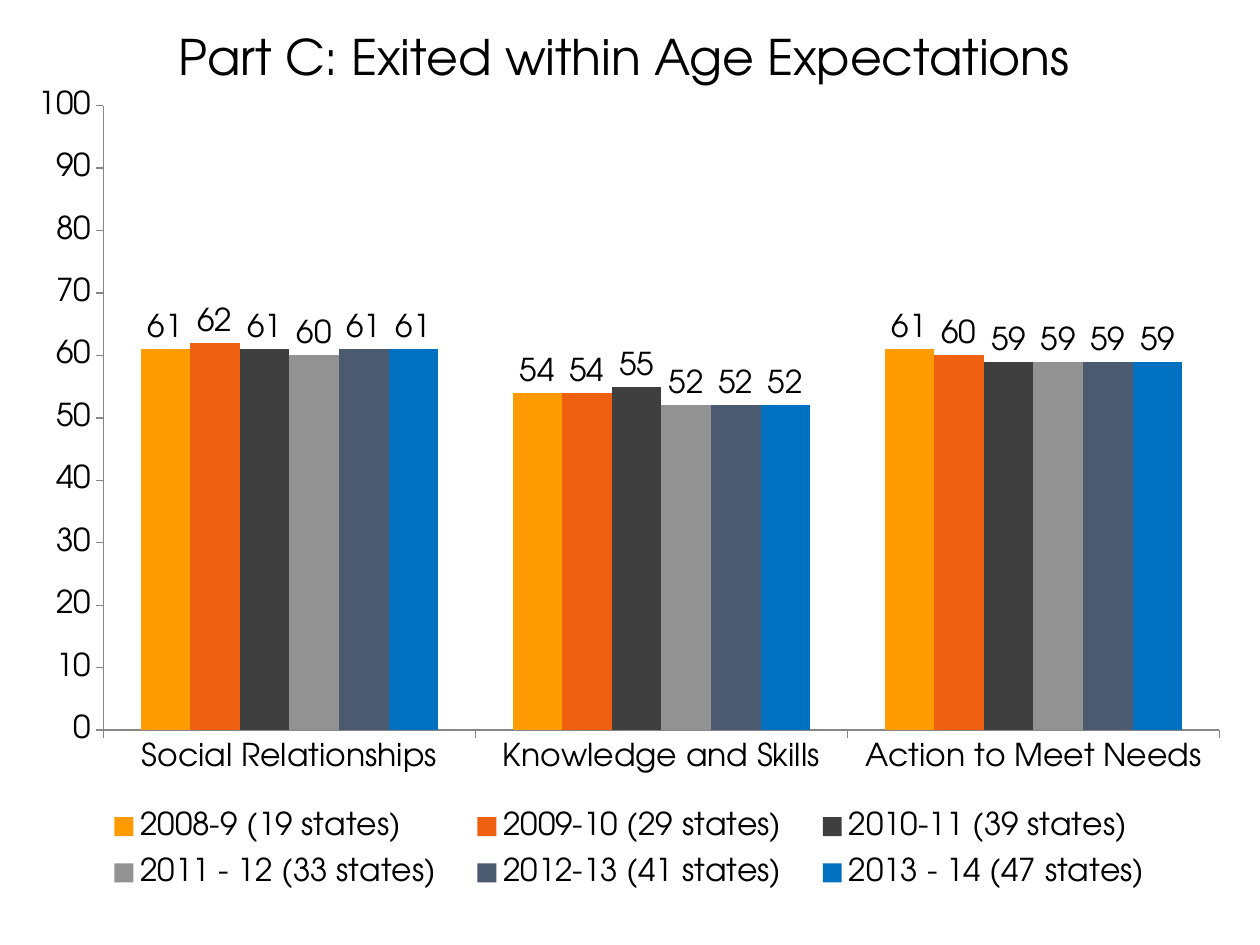
from lxml import etree
from pptx import Presentation
from pptx import util as u
from pptx.chart.data import CategoryChartData
from pptx.dml.color import RGBColor
from pptx.enum import chart as c
from pptx.oxml.ns import qn

TITLE = "Part C: Exited within Age Expectations"
CATEGORIES = ["Social Relationships", "Knowledge and Skills", "Action to Meet Needs"]
SERIES = [
    ("2008-9 (19 states)", (61, 54, 61), "FE9B00"),
    ("2009-10 (29 states)", (62, 54, 60), "EF6011"),
    ("2010-11 (39 states)", (61, 55, 59), "3F3F3F"),
    ("2011 - 12 (33 states)", (60, 52, 59), "929292"),
    ("2012-13 (41 states)", (61, 52, 59), "4B5A6F"),
    ("2013 - 14 (47 states)", (61, 52, 59), "0070C0"),
]
FONT = "TeX Gyre Adventor"
PX = u.Inches(1) / 126
CHART = (10, 0, 1228, 935)
PLOT = (103, 106, 1116, 625)
LEGEND = (84, 796, 1092, 108)


def px(value):
    return u.Emu(round(value * PX))


def color(value):
    return RGBColor.from_string(value)


def style_font(font, size=18, fill="000000"):
    font.name, font.size, font.bold = FONT, u.Pt(size), False
    font.color.rgb = color(fill)


def write(frame, content, **style):
    frame.text = content
    style_font(frame.paragraphs[0].runs[0].font, **style)


def place(layout, box, inner=False):
    """Position a chart part as fractions of the chart area."""
    for child in list(layout):
        layout.remove(child)
    manual = etree.SubElement(layout, qn("c:manualLayout"))
    left, top, width, height = box
    fractions = ((left - CHART[0]) / CHART[2], (top - CHART[1]) / CHART[3],
                 width / CHART[2], height / CHART[3])
    settings = [("layoutTarget", "inner")] if inner else []
    settings += [("xMode", "edge"), ("yMode", "edge")]
    settings += [(name, f"{part:.3f}") for name, part in zip("xywh", fractions)]
    for name, value in settings:
        etree.SubElement(manual, qn("c:" + name)).set("val", value)


presentation = Presentation()
presentation.slide_width, presentation.slide_height = px(1260), px(945)
slide = presentation.slides.add_slide(presentation.slide_layouts[6])

# Chart and its data
data = CategoryChartData(number_format="General")
data.categories = CATEGORIES
for name, values, _ in SERIES:
    data.add_series(name, values)
chart = slide.shapes.add_chart(
    c.XL_CHART_TYPE.COLUMN_CLUSTERED, *map(px, CHART), data).chart
style_font(chart.font)
chart.has_title = True
write(chart.chart_title.text_frame, TITLE, size=28)
chart.chart_title.include_in_layout = False

# Columns and value labels
plot = chart.plots[0]
plot.gap_width, plot.overlap = 150, 0
plot.vary_by_categories = False
for series, (_, _, fill) in zip(plot.series, SERIES):
    series.format.fill.solid()
    series.format.fill.fore_color.rgb = color(fill)
    labels = series.data_labels
    labels.show_value = True
    labels.position = c.XL_LABEL_POSITION.OUTSIDE_END
    style_font(labels.font)

# Axes
chart.value_axis.minimum_scale, chart.value_axis.maximum_scale = 0, 100
chart.value_axis.major_unit = 10
chart.value_axis.has_major_gridlines = False
for axis in (chart.category_axis, chart.value_axis):
    axis.major_tick_mark = c.XL_TICK_MARK.OUTSIDE
    axis.format.line.color.rgb = color("868686")
    axis.format.line.width = u.Pt(0.75)
    style_font(axis.tick_labels.font)

# Legend and layout
chart.has_legend = True
legend = chart.legend
legend.position = c.XL_LEGEND_POSITION.BOTTOM
legend.include_in_layout = False
style_font(legend.font)
plot_area = chart.element.find(".//" + qn("c:plotArea"))
plot_layout = plot_area.find(qn("c:layout"))
if plot_layout is None:
    plot_layout = etree.Element(qn("c:layout"))
    plot_area.insert(0, plot_layout)
place(plot_layout, PLOT, inner=True)
legend_xml = chart.element.find(".//" + qn("c:legend"))
legend_layout = legend_xml.find(qn("c:layout"))
if legend_layout is None:
    legend_layout = etree.Element(qn("c:layout"))
    legend_xml.find(qn("c:legendPos")).addnext(legend_layout)
place(legend_layout, LEGEND)

presentation.save("out.pptx")
